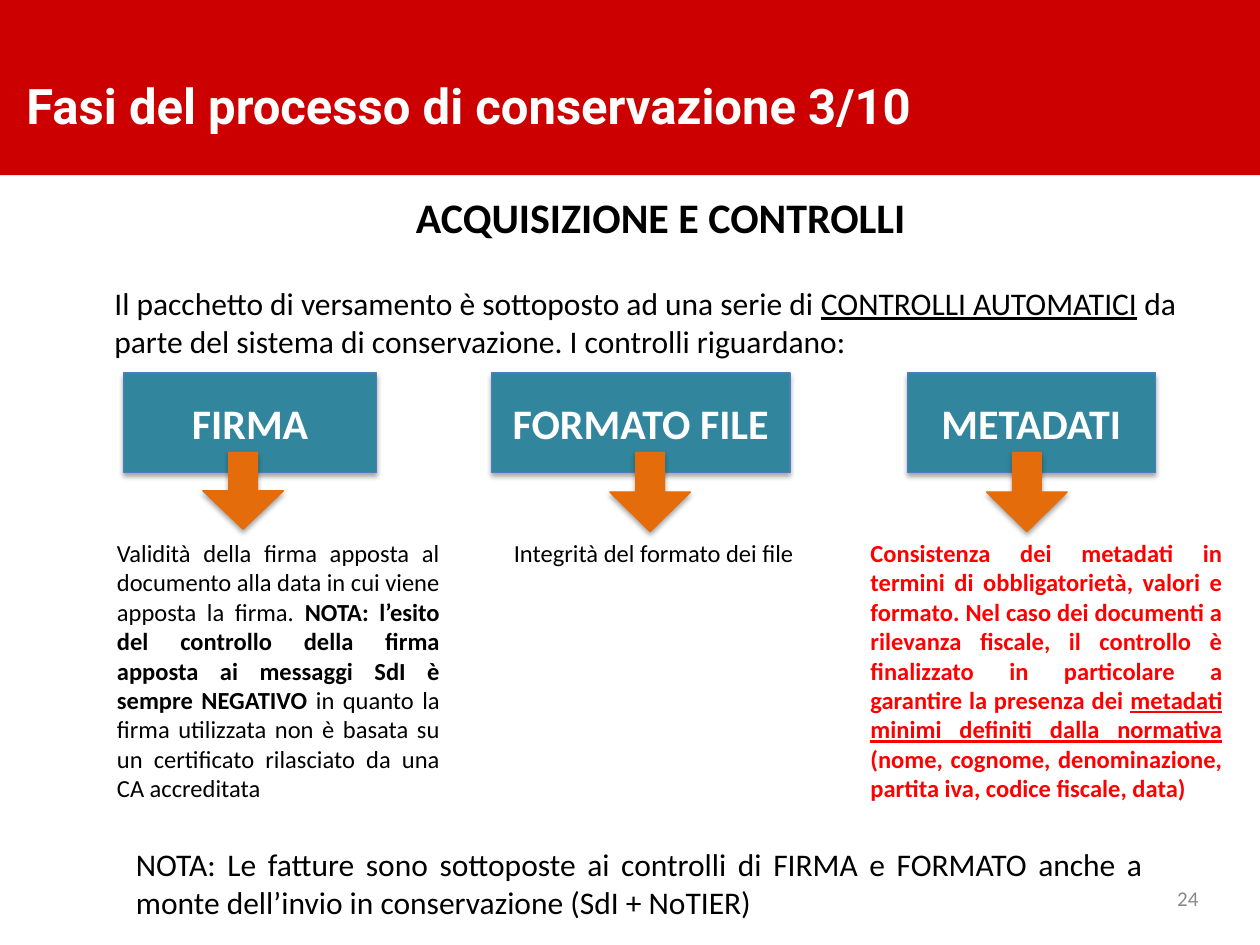
from lxml import etree
from pptx import Presentation
from pptx.dml.color import RGBColor
from pptx.enum.shapes import MSO_SHAPE
from pptx.enum.text import MSO_ANCHOR, PP_ALIGN
from pptx.oxml.ns import qn
from pptx.util import Inches, Pt

RECT, ARROW = MSO_SHAPE.RECTANGLE, MSO_SHAPE.DOWN_ARROW
MIDDLE = MSO_ANCHOR.MIDDLE
LEFT, CENTER, RIGHT, JUST = PP_ALIGN.LEFT, PP_ALIGN.CENTER, PP_ALIGN.RIGHT, PP_ALIGN.JUSTIFY
BLACK = RGBColor(0x00, 0x00, 0x00)
WHITE = RGBColor(0xFF, 0xFF, 0xFF)
BAND = RGBColor(0xCC, 0x00, 0x00)
RED = RGBColor(0xFF, 0x00, 0x00)
TEAL = RGBColor(0x31, 0x85, 0x9C)
BLUE = RGBColor(0x4B, 0x7E, 0xBC)
ORANGE = RGBColor(0xE4, 0x6C, 0x0A)
GREY = RGBColor(0x89, 0x89, 0x89)

TITLE = "Fasi del processo di conservazione 3/10"
HEAD = [("ACQUISIZIONE E CONTROLLI", "b")]
INTRO = [
    ("Il pacchetto di versamento è sottoposto ad una serie di ", ""),
    ("CONTROLLI AUTOMATICI", "u"),
    (" da parte del sistema di conservazione. I controlli riguardano:", ""),
]
FIRMA = [
    ("Validità della firma apposta al documento alla data in cui viene apposta la firma. ", ""),
    ("NOTA: l’esito del controllo della firma apposta ai messaggi SdI è sempre NEGATIVO ", "b"),
    ("in quanto la firma utilizzata non è basata su un certificato rilasciato da una CA accreditata", ""),
]
FORMAT = [("Integrità del formato dei file", "")]
META = [
    ("Consistenza dei metadati in termini di obbligatorietà, valori e formato. Nel caso dei "
     "documenti a rilevanza fiscale, il controllo è finalizzato in particolare a garantire "
     "la presenza dei ", "b"),
    ("metadati minimi definiti dalla normativa ", "bu"),
    ("(nome, cognome, denominazione, partita iva, codice fiscale, data)", "b"),
]
NOTE = [("NOTA: Le fatture sono sottoposte ai controlli di FIRMA e FORMATO anche a monte "
         "dell’invio in conservazione (SdI + NoTIER)", "")]
CHECKS = [
    ("FIRMA", 0.98, 2.01, 1.61, 0.61, FIRMA, (0.83, 4.22, 2.76, 2.63), JUST, BLACK),
    ("FORMATO FILE", 3.9, 2.37, 4.84, 0.63, FORMAT, (3.98, 4.22, 2.44, 0.34), LEFT, BLACK),
    ("METADATI", 7.2, 1.97, 7.83, 0.63, META, (6.81, 4.22, 2.99, 2.22), JUST, RED),
]


def write(para, runs, size, color=BLACK, align=LEFT, face="Calibri"):
    para.alignment = align
    for text, marks in runs:
        run = para.add_run()
        run.text = text
        font = run.font
        font.name, font.size, font.color.rgb = face, Pt(size), color
        font.bold, font.underline = "b" in marks, "u" in marks


def add_text(area, runs, size, color=BLACK, align=LEFT):
    frame = slide.shapes.add_textbox(*map(Inches, area)).text_frame
    frame.word_wrap = True
    write(frame.paragraphs[0], runs, size, color, align)
    return frame


def add_block(kind, area, fill, line=None):
    block = slide.shapes.add_shape(kind, *map(Inches, area))
    block.shadow.inherit = False
    block.fill.solid()
    block.fill.fore_color.rgb = fill
    if line is None:
        block.line.fill.background()
    else:
        block.line.color.rgb, block.line.width = line, Pt(0.75)
        add_shade(block)
    return block


def add_shade(block):
    effects = block._element.spPr.find(qn("a:effectLst"))
    shade = etree.SubElement(effects, qn("a:outerShdw"), blurRad=str(Pt(3.1)),
                             dist=str(Pt(1.8)), dir="5400000", rotWithShape="0")
    tint = etree.SubElement(shade, qn("a:srgbClr"), val=str(BLACK))
    etree.SubElement(tint, qn("a:alpha"), val="35000")


deck = Presentation()
deck.slide_width, deck.slide_height = Inches(10), Inches(7.5)
slide = deck.slides.add_slide(deck.slide_layouts[5])

band = add_block(RECT, (0, 0, 10.04, 1.39), BAND)
slide.shapes._spTree.insert(2, band._element)

title = slide.shapes.title
title.left, title.top, title.width, title.height = map(Inches, (0.03, 0.52, 8.99, 0.63))
title.text_frame.margin_left = Inches(0.18)
title.text_frame.vertical_anchor = MIDDLE
write(title.text_frame.paragraphs[0], [(TITLE, "b")], 28, WHITE, LEFT, "Roboto")

number = add_text((9.17, 6.93, 0.44, 0.4), [("24", "")], 12, GREY, RIGHT)
number.vertical_anchor = MIDDLE

intro = add_text((0.81, 1.47, 8.87, 2.12), HEAD, 24, align=CENTER)
para = intro.add_paragraph()
para.space_before = Pt(24)
write(para, INTRO, 18)

for name, left, width, *_ in CHECKS:
    box = add_block(RECT, (left, 2.96, width, 0.79), TEAL, BLUE)
    box.text_frame.vertical_anchor = MIDDLE
    write(box.text_frame.paragraphs[0], [(name, "b")], 24, WHITE, CENTER)

for _, _, _, tip, height, runs, area, align, color in CHECKS:
    arrow = add_block(ARROW, (tip, 3.59, 0.64, height), ORANGE, ORANGE)
    arrow.adjustments[0], arrow.adjustments[1] = 0.355, 0.5
    frame = add_text(area, runs, 14, color, align)
    frame.word_wrap = runs is not FORMAT

add_text((0.98, 6.66, 8.19, 0.71), NOTE, 18, align=JUST)

deck.save("out.pptx")
